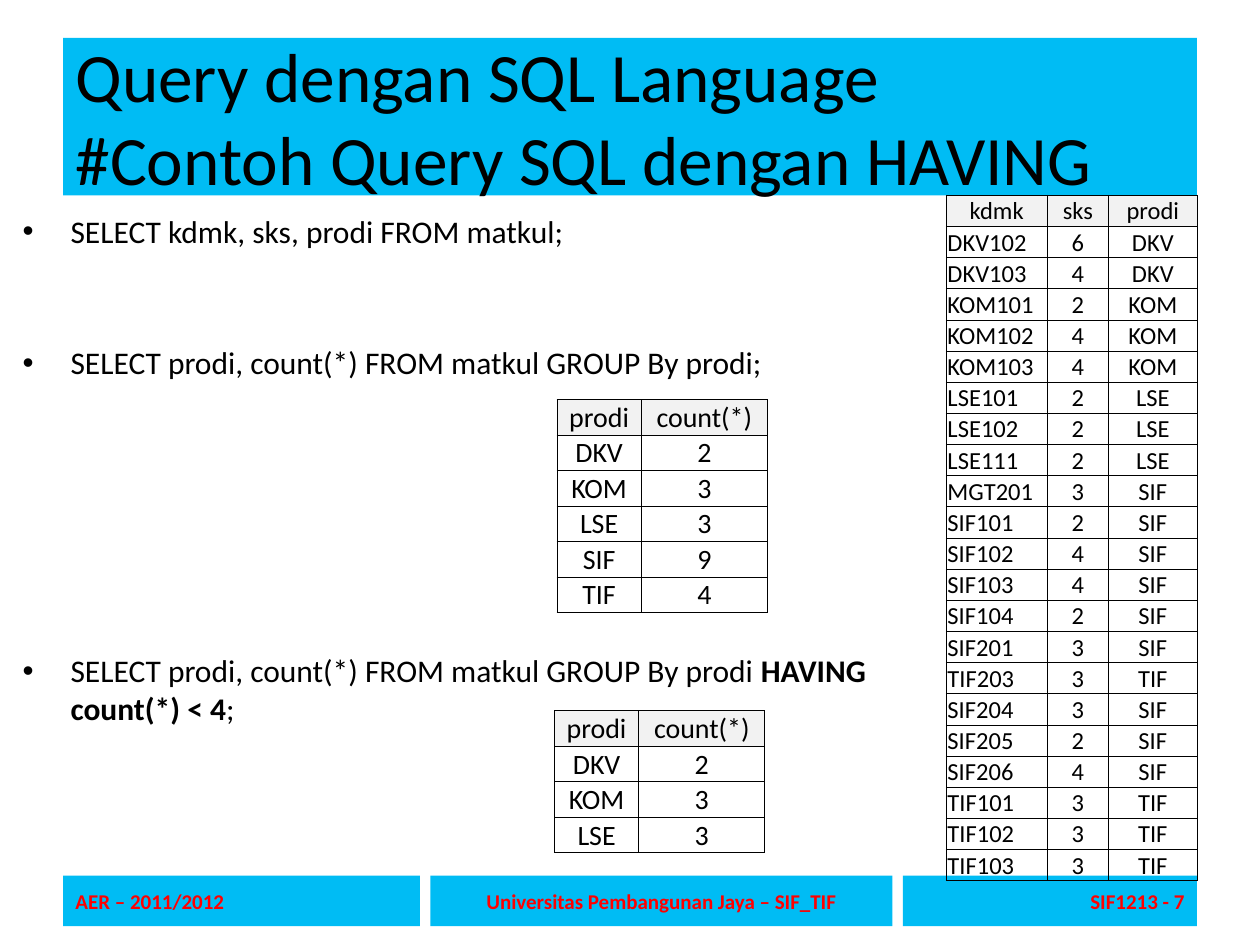
from dataclasses import dataclass

from lxml import etree
from pptx import Presentation
from pptx.dml.color import RGBColor
from pptx.enum.shapes import MSO_SHAPE
from pptx.enum.text import MSO_ANCHOR, MSO_AUTO_SIZE, PP_ALIGN
from pptx.oxml.ns import qn
from pptx.util import Inches, Pt

LEFT, CENTER, RIGHT = PP_ALIGN.LEFT, PP_ALIGN.CENTER, PP_ALIGN.RIGHT
MIDDLE, BOTTOM, TOP = MSO_ANCHOR.MIDDLE, MSO_ANCHOR.BOTTOM, MSO_ANCHOR.TOP
NO_FIT = MSO_AUTO_SIZE.NONE
RECTANGLE = MSO_SHAPE.RECTANGLE

FONT = "Calibri"
BLACK, RED, BLUE, GREY = "000000", "FF0000", "00BCF4", "F2F2F2"
GRID = 1 / 12  # inches per footer column
MARGIN = 0.5
BODY_SIZE = 18
LINE_HEIGHT = 22  # points
LINE_PITCH = 25.2  # line height plus paragraph spacing, in points


@dataclass
class Query:
    plain: str
    lines_below_previous: int
    bold: str = ""
    ending: str = ""


@dataclass
class FooterPanel:
    text: str
    column: int
    span: int
    alignment: PP_ALIGN


@dataclass
class ResultTable:
    left: float
    top: float
    column_widths: tuple[float, ...]
    row_height: float
    size: int
    rows: list[list[str]]
    first_alignment: PP_ALIGN = CENTER


def split_rows(text: str) -> list[list[str]]:
    return [row.split() for row in text.strip().splitlines()]


QUERIES = [
    Query("SELECT kdmk, sks, prodi FROM matkul;", 0),
    Query("SELECT prodi, count(*) FROM matkul GROUP By prodi;", 3),
    Query("SELECT prodi, count(*) FROM matkul GROUP By prodi ", 7,
          "HAVING count(*) < 4", ";"),
]
FOOTER = [
    FooterPanel("AER – 2011/2012", 0, 34, LEFT),
    FooterPanel("Universitas Pembangunan Jaya – SIF_TIF", 35, 44, CENTER),
    FooterPanel("SIF1213 - 7", 80, 28, RIGHT),
]
COURSES = split_rows("""
kdmk sks prodi
DKV102 6 DKV
DKV103 4 DKV
KOM101 2 KOM
KOM102 4 KOM
KOM103 4 KOM
LSE101 2 LSE
LSE102 2 LSE
LSE111 2 LSE
MGT201 3 SIF
SIF101 2 SIF
SIF102 4 SIF
SIF103 4 SIF
SIF104 2 SIF
SIF201 3 SIF
TIF203 3 TIF
SIF204 3 SIF
SIF205 2 SIF
SIF206 4 SIF
TIF101 3 TIF
TIF102 3 TIF
TIF103 3 TIF
""")
COUNTS = split_rows("""
prodi count(*)
DKV 2
KOM 3
LSE 3
SIF 9
TIF 4
""")
HAVING_COUNTS = COUNTS[:1] + [row for row in COUNTS[1:] if int(row[1]) < 4]
TABLES = [
    ResultTable(7.51, 1.55, (0.8, 0.49, 0.7), 5.44 / len(COURSES), 14, COURSES, LEFT),
    ResultTable(4.42, 3.17, (0.67, 1), 0.28, 16, COUNTS),
    ResultTable(4.4, 5.64, (0.67, 1), 0.28, 16, HAVING_COUNTS),
]


def color(value: str) -> RGBColor:
    return RGBColor.from_string(value)


def style(para, size: float, alignment: PP_ALIGN, ink: str = BLACK, bold: bool = False) -> None:
    para.alignment = alignment
    para.font.name, para.font.size, para.font.bold = FONT, Pt(size), bold
    para.font.color.rgb = color(ink)


def place(shape, left: float, top: float, width: float, height: float) -> None:
    shape.left, shape.top = Inches(left), Inches(top)
    shape.width, shape.height = Inches(width), Inches(height)


def fill_title(title) -> None:
    place(title, MARGIN, 0.3, 9, 1.25)
    title.fill.solid()
    title.fill.fore_color.rgb = color(BLUE)
    frame = title.text_frame
    frame.text = "Query dengan SQL Language\v#Contoh Query SQL dengan HAVING"
    frame.auto_size, frame.vertical_anchor = NO_FIT, MIDDLE
    style(frame.paragraphs[0], 39.6, LEFT)


def fill_queries(body) -> None:
    place(body, 0.08, 1.63, 7.42, 4.95)
    frame = body.text_frame
    frame.auto_size, frame.vertical_anchor = NO_FIT, TOP
    for index, query in enumerate(QUERIES):
        para = frame.add_paragraph() if index else frame.paragraphs[0]
        style(para, BODY_SIZE, LEFT)
        gap = query.lines_below_previous * LINE_PITCH - LINE_HEIGHT
        para.space_before = Pt(max(0, gap))
        properties = para._p.get_or_add_pPr()
        properties.set("marL", str(Inches(0.38)))
        properties.set("indent", str(Inches(-0.38)))
        para.add_run().text = query.plain
        if query.bold:
            span = para.add_run()
            span.text, span.font.bold = query.bold, True
            para.add_run().text = query.ending


def draw_footer(shapes, panel: FooterPanel) -> None:
    box = shapes.add_shape(RECTANGLE, Inches(MARGIN + panel.column * GRID), Inches(6.95),
                           Inches(panel.span * GRID), Inches(0.4))
    box.shadow.inherit = False
    box.fill.solid()
    box.fill.fore_color.rgb = color(BLUE)
    box.line.fill.background()
    box.text_frame.text = panel.text
    box.text_frame.vertical_anchor = MIDDLE
    style(box.text_frame.paragraphs[0], 12, panel.alignment, RED, True)


def add_borders(cell) -> None:
    properties = cell._tc.get_or_add_tcPr()
    for side in ("lnL", "lnR", "lnT", "lnB"):
        line = etree.SubElement(properties, qn(f"a:{side}"), w=str(Pt(0.5)))
        solid = etree.SubElement(line, qn("a:solidFill"))
        etree.SubElement(solid, qn("a:srgbClr"), val=BLACK)


def draw_table(shapes, spec_table: ResultTable) -> None:
    widths, rows = spec_table.column_widths, spec_table.rows
    table = shapes.add_table(len(rows), len(widths), Inches(spec_table.left),
                             Inches(spec_table.top), Inches(sum(widths)),
                             Inches(spec_table.row_height * len(rows))).table
    table.first_row = table.horz_banding = False
    for column, width in zip(table.columns, widths):
        column.width = Inches(width)
    for row_index, values in enumerate(rows):
        table.rows[row_index].height = Inches(spec_table.row_height)
        is_header = row_index == 0
        for column_index, value in enumerate(values):
            cell = table.cell(row_index, column_index)
            cell.text = value
            cell.margin_left = cell.margin_right = cell.margin_top = Inches(0.01)
            cell.margin_bottom = 0
            cell.vertical_anchor = BOTTOM if is_header else MIDDLE
            is_key = column_index == 0 and not is_header
            style(cell.text_frame.paragraphs[0], spec_table.size,
                  spec_table.first_alignment if is_key else CENTER)
            add_borders(cell)
            if is_header:
                cell.fill.solid()
                cell.fill.fore_color.rgb = color(GREY)
            else:
                cell.fill.background()


def main() -> None:
    deck = Presentation()
    deck.slide_width, deck.slide_height = Inches(10), Inches(7.5)
    page = deck.slides.add_slide(deck.slide_layouts[1])
    fill_title(page.shapes.title)
    fill_queries(page.placeholders[1])
    for panel in FOOTER:
        draw_footer(page.shapes, panel)
    for result in TABLES:
        draw_table(page.shapes, result)
    deck.save("out.pptx")


if __name__ == "__main__":
    main()
